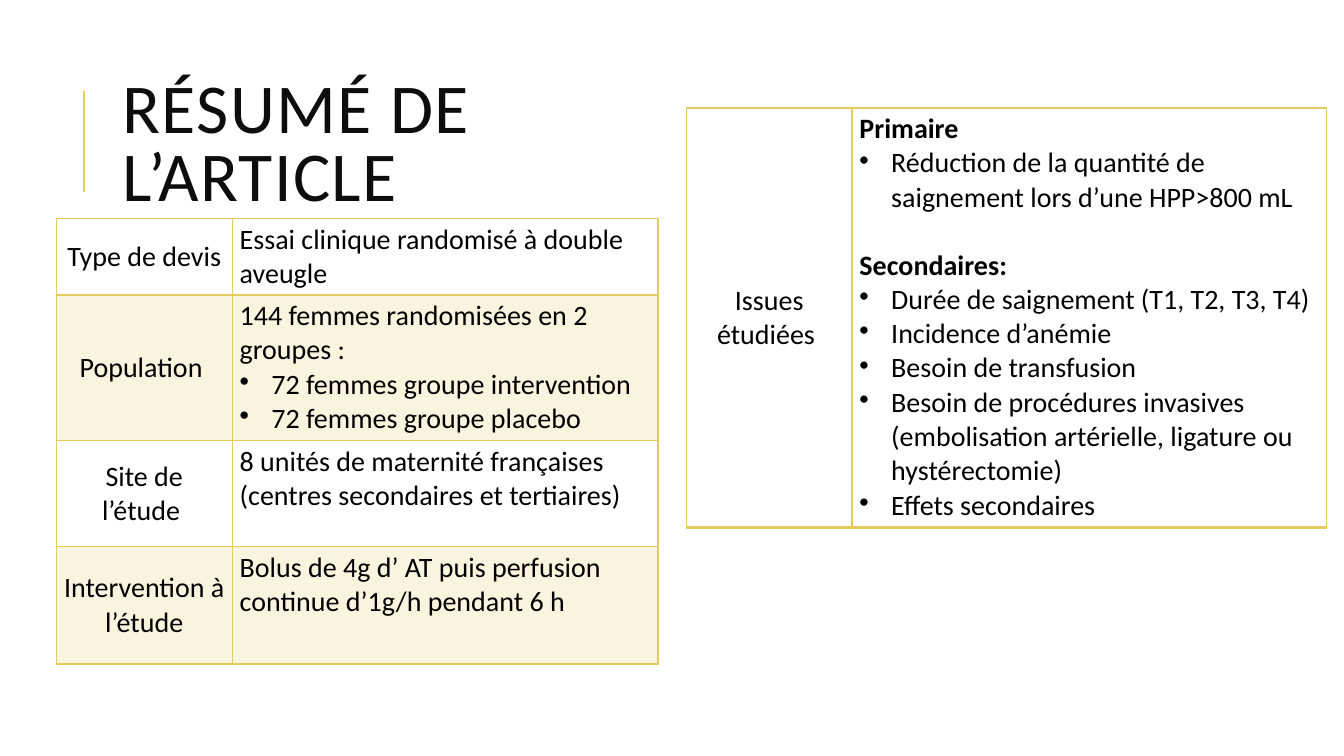
from dataclasses import dataclass
from lxml.etree import SubElement
from pptx import Presentation
from pptx.dml.color import RGBColor as Rgb
from pptx.enum.shapes import MSO_CONNECTOR as Link
from pptx.enum.text import MSO_ANCHOR as Anchor, PP_ALIGN as Align
from pptx.oxml import parse_xml
from pptx.oxml.ns import nsdecls, qn
from pptx.util import Cm, Pt


@dataclass(frozen=True)
class Theme:
    font: str = "Calibri"
    gold: str = "E3CC5A"
    ink: str = "000000"
    dark: str = "0D0D0D"
    title: int = 50
    body: int = 20
    gap: int = 24
    tint: int = 20


THEME = Theme()
PLAIN, HEAD, ITEM = range(3)

STUDY = [
    ("Type de devis", [(PLAIN, "Essai clinique randomisé à double aveugle")]),
    ("Population ", [
        (PLAIN, "144 femmes randomisées en 2 groupes :"),
        (ITEM, "72 femmes groupe intervention"),
        (ITEM, "72 femmes groupe placebo"),
    ]),
    ("Site de l’étude ", [
        (PLAIN, "8 unités de maternité françaises"),
        (PLAIN, "(centres secondaires et tertiaires)"),
    ]),
    ("Intervention à l’étude", [
        (PLAIN, "Bolus de 4g d’ AT puis perfusion continue d’1g/h pendant 6 h"),
    ]),
]
ISSUES = [
    ("Issues étudiées ", [
        (HEAD, "Primaire"),
        (ITEM, "Réduction de la quantité de saignement lors d’une HPP>800 mL"),
        (HEAD, "Secondaires:"),
        (ITEM, "Durée de saignement (T1, T2, T3, T4)"),
        (ITEM, "Incidence d’anémie"),
        (ITEM, "Besoin de transfusion"),
        (ITEM, "Besoin de procédures invasives (embolisation artérielle, "
               "ligature ou hystérectomie)"),
        (ITEM, "Effets secondaires"),
    ]),
]


def style(para, size, color, bold=False):
    font = para.font
    font.name, font.size, font.bold = THEME.font, Pt(size), bold
    font.color.rgb = Rgb.from_string(color)


def bullet(para):
    props = para._p.get_or_add_pPr()
    props.set("marL", str(Cm(0.8)))
    props.set("indent", str(-Cm(0.8)))
    mark = parse_xml(f'<a:buChar {nsdecls("a")} char="•"/>')
    props.insert_element_before(mark, "a:tabLst", "a:defRPr", "a:extLst")


def border(cell, low):
    props = cell._tc.get_or_add_tcPr()
    for spot, side in enumerate("LRTB"):
        width = Pt(low if side == "B" else 1)
        props.insert(spot, parse_xml(
            f'<a:ln{side} {nsdecls("a")} w="{width}"><a:solidFill>'
            f'<a:srgbClr val="{THEME.gold}"/></a:solidFill></a:ln{side}>'))


def paint(cell, tinted):
    if not tinted:
        cell.fill.background()
        return
    cell.fill.solid()
    cell.fill.fore_color.rgb = Rgb.from_string(THEME.gold)
    color = cell._tc.tcPr.find(".//" + qn("a:srgbClr"))
    SubElement(color, qn("a:alpha"), val=str(THEME.tint * 1000))


def fill_cell(cell, lines):
    cell.margin_left = cell.margin_right = Cm(0.19)
    cell.margin_top = cell.margin_bottom = Cm(0.1)
    frame = cell.text_frame
    for rank, (kind, text) in enumerate(lines):
        para = frame.add_paragraph() if rank else frame.paragraphs[0]
        para.text = text
        style(para, THEME.body, THEME.ink, kind == HEAD)
        if kind == ITEM:
            bullet(para)
        if kind == HEAD and rank:
            para.space_before = Pt(THEME.gap)


def add_grid(slide, left, top, widths, heights, rows):
    grid = slide.shapes.add_table(
        len(rows), len(widths), Cm(left), Cm(top),
        Cm(sum(widths)), Cm(sum(heights))).table
    grid.first_row = grid.horz_banding = False
    for col, width in zip(grid.columns, widths):
        col.width = Cm(width)
    for rank, (label, lines) in enumerate(rows):
        grid.rows[rank].height = Cm(heights[rank])
        name, info = grid.rows[rank].cells
        fill_cell(name, [(PLAIN, label)])
        fill_cell(info, lines)
        name.vertical_anchor = Anchor.MIDDLE
        name.text_frame.paragraphs[0].alignment = Align.CENTER
        for cell in (name, info):
            paint(cell, rank % 2)
            border(cell, 1 if rank else 2)


def add_title(slide, text):
    frame = slide.shapes.add_textbox(
        Cm(2.84), Cm(1.63), Cm(12.32), Cm(4.17)).text_frame
    frame.word_wrap = True
    frame.vertical_anchor = Anchor.MIDDLE
    para = frame.paragraphs[0]
    para.line_spacing = 0.8
    run = para.add_run()
    run.text = text
    style(para, THEME.title, THEME.dark)
    run.font._element.set("spc", "100")


def add_rule(slide, x, top, end):
    rule = slide.shapes.add_connector(
        Link.STRAIGHT, Cm(x), Cm(end), Cm(x), Cm(top))
    rule.line.color.rgb = Rgb.from_string(THEME.gold)
    rule.line.width = Pt(1.5)
    SubElement(rule._element.spPr, qn("a:effectLst"))


def main():
    deck = Presentation()
    deck.slide_width, deck.slide_height = Cm(33.87), Cm(19.05)
    slide = deck.slides.add_slide(deck.slide_layouts[6])
    add_rule(slide, 2.11, 2.29, 4.83)
    add_title(slide, "RÉSUMÉ DE L’ARTICLE")
    add_grid(slide, 1.42, 5.51, [4.43, 10.73],
             [1.92, 3.68, 2.67, 2.95], STUDY)
    add_grid(slide, 17.3, 2.72, [4.17, 11.96], [10.57], ISSUES)
    deck.save("out.pptx")


if __name__ == "__main__":
    main()
